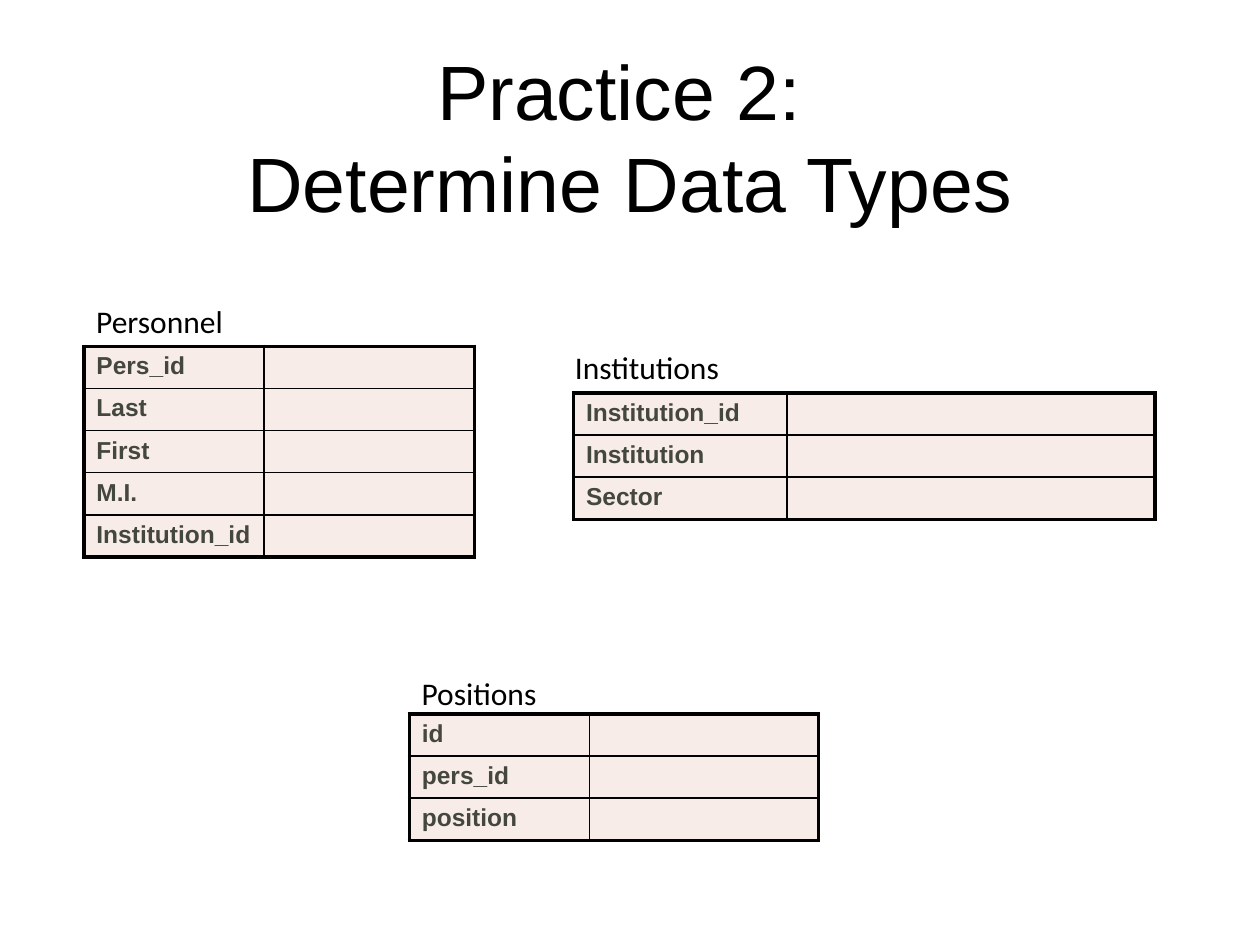
from lxml import etree
from pptx import Presentation
from pptx import util as u
from pptx.dml.color import RGBColor
from pptx.enum import text
from pptx.oxml.ns import qn

# Content: lengths in cm
TITLE = ["Practice 2: ", "Determine Data Types"]
ENTITIES = [
    {"name": "Personnel", "label": (1.69, 5.96, 3.38), "at": (1.69, 6.98),
     "columns": (3.63, 4.24),
     "fields": ["Pers_id", "Last", "First", "M.I.", "Institution_id"]},
    {"name": "Positions", "label": (8.25, 13.46, 3.12), "at": (8.25, 14.39),
     "columns": (3.63, 4.62), "fields": ["id", "pers_id", "position"]},
    {"name": "Institutions", "label": (11.34, 6.9, 3.58), "at": (11.56, 7.92),
     "columns": (4.3, 7.42), "fields": ["Institution_id", "Institution", "Sector"]},
]
ROW_HEIGHT, LABEL_HEIGHT = 0.85, 1.02
OUTER, INNER = 2.25, 1
INK, FILL = "000000", "F8ECE8"
TITLE_FONT = {"name": "Arial", "size": u.Pt(44)}
LABEL_FONT = {"name": "Calibri", "size": u.Pt(18)}
FIELD_FONT = {"name": "Arial", "size": u.Pt(14), "bold": True}


def color(value):
    return RGBColor.from_string(value)


def write(paragraph, words, font, ink=INK):
    run = paragraph.add_run()
    run.text = words
    for key, value in font.items():
        setattr(run.font, key, value)
    run.font.color.rgb = color(ink)


def draw_borders(cell, widths):
    properties = cell._tc.get_or_add_tcPr()
    for side, width in widths.items():
        line = etree.SubElement(properties, qn(f"a:ln{side}"), w=str(u.Pt(width)))
        solid = etree.SubElement(line, qn("a:solidFill"))
        etree.SubElement(solid, qn("a:srgbClr"), val=INK)


def add_entity(slide, entity):
    # Name above the table
    left, top, width = map(u.Cm, entity["label"])
    label = slide.shapes.add_textbox(left, top, width, u.Cm(LABEL_HEIGHT)).text_frame
    label.word_wrap = False
    label.auto_size = text.MSO_AUTO_SIZE.SHAPE_TO_FIT_TEXT
    write(label.paragraphs[0], entity["name"], LABEL_FONT)

    # Field names, with an empty column for the data types
    fields, columns = entity["fields"], entity["columns"]
    left, top = map(u.Cm, entity["at"])
    table = slide.shapes.add_table(len(fields), len(columns), left, top, u.Cm(sum(columns)),
                                   u.Cm(ROW_HEIGHT * len(fields))).table
    for column, width in zip(table.columns, columns):
        column.width = u.Cm(width)
    for r, field in enumerate(fields):
        table.rows[r].height = u.Cm(ROW_HEIGHT)
        write(table.cell(r, 0).text_frame.paragraphs[0], field, FIELD_FONT, "44473D")
        # An empty cell keeps the row low only with a small end-of-paragraph size
        blank = table.cell(r, 1).text_frame.paragraphs[0]._p
        etree.SubElement(blank, qn("a:endParaRPr"), sz="1400")
        for c in range(len(columns)):
            cell = table.cell(r, c)
            edges = {"L": c == 0, "R": c == len(columns) - 1,
                     "T": r == 0, "B": r == len(fields) - 1}
            draw_borders(cell, {side: OUTER if edge else INNER
                                for side, edge in edges.items()})
            cell.fill.solid()
            cell.fill.fore_color.rgb = color(FILL)


def main():
    deck = Presentation()
    deck.slide_width, deck.slide_height = u.Cm(25.4), u.Cm(19.05)
    slide = deck.slides.add_slide(deck.slide_layouts[6])

    # Title
    title = slide.shapes.add_textbox(u.Cm(1.27), u.Cm(0.76), u.Cm(22.86), u.Cm(2.2)).text_frame
    title.word_wrap = True
    title.margin_top = u.Cm(0.11)
    for i, words in enumerate(TITLE):
        paragraph = title.add_paragraph() if i else title.paragraphs[0]
        paragraph.alignment = text.PP_ALIGN.CENTER
        write(paragraph, words, TITLE_FONT)

    for entity in ENTITIES:
        add_entity(slide, entity)
    deck.save("out.pptx")


if __name__ == "__main__":
    main()
